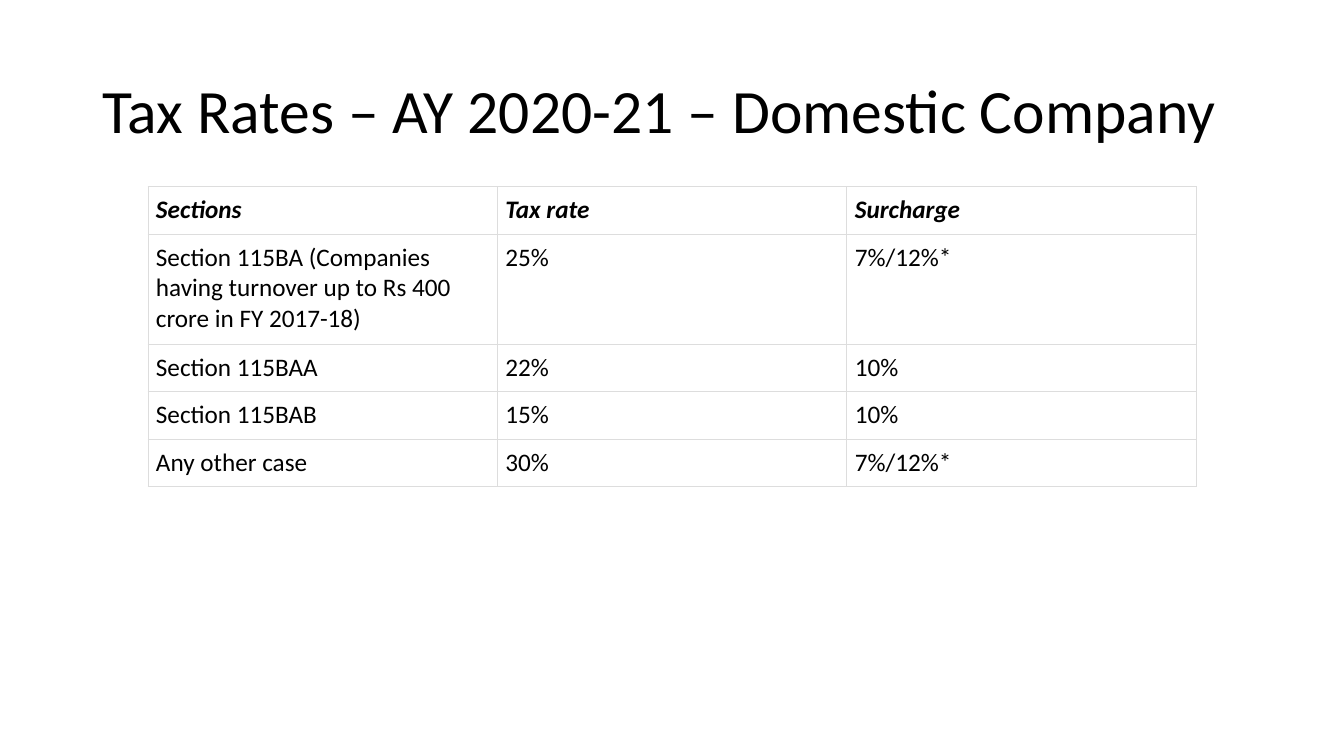
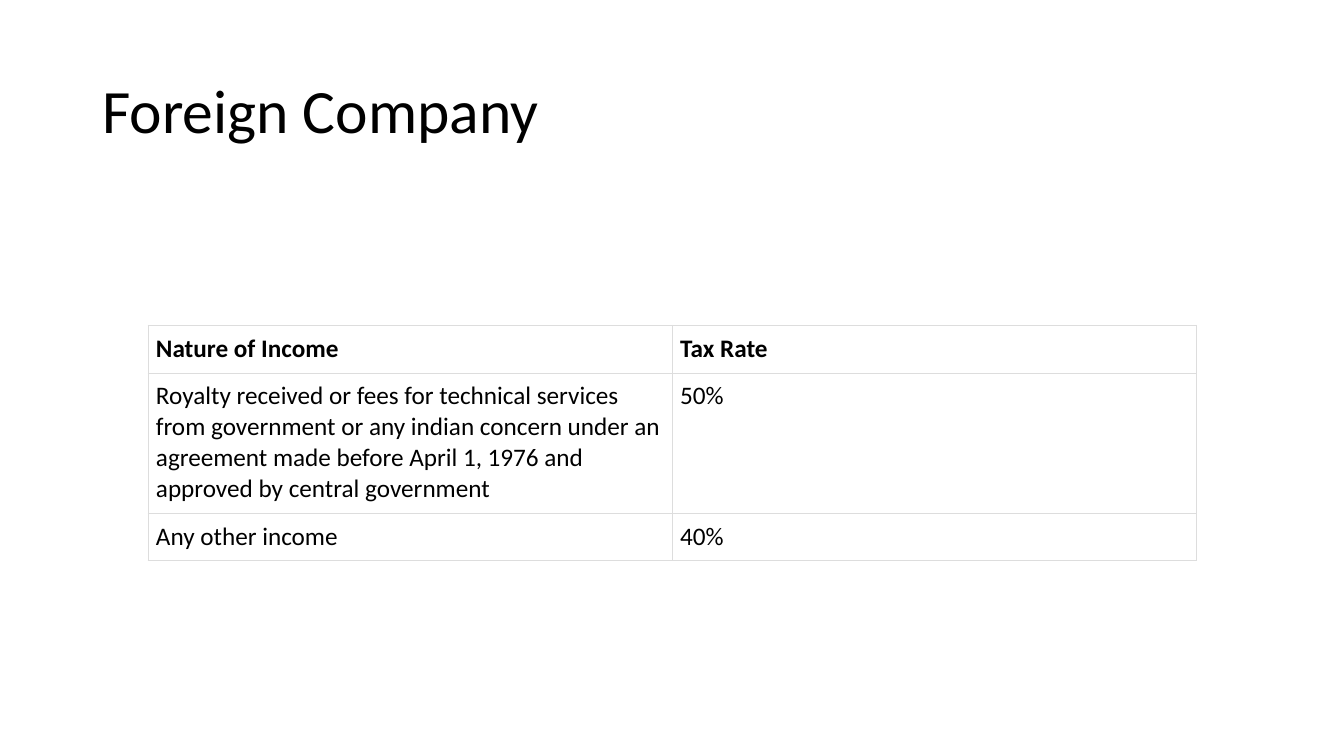
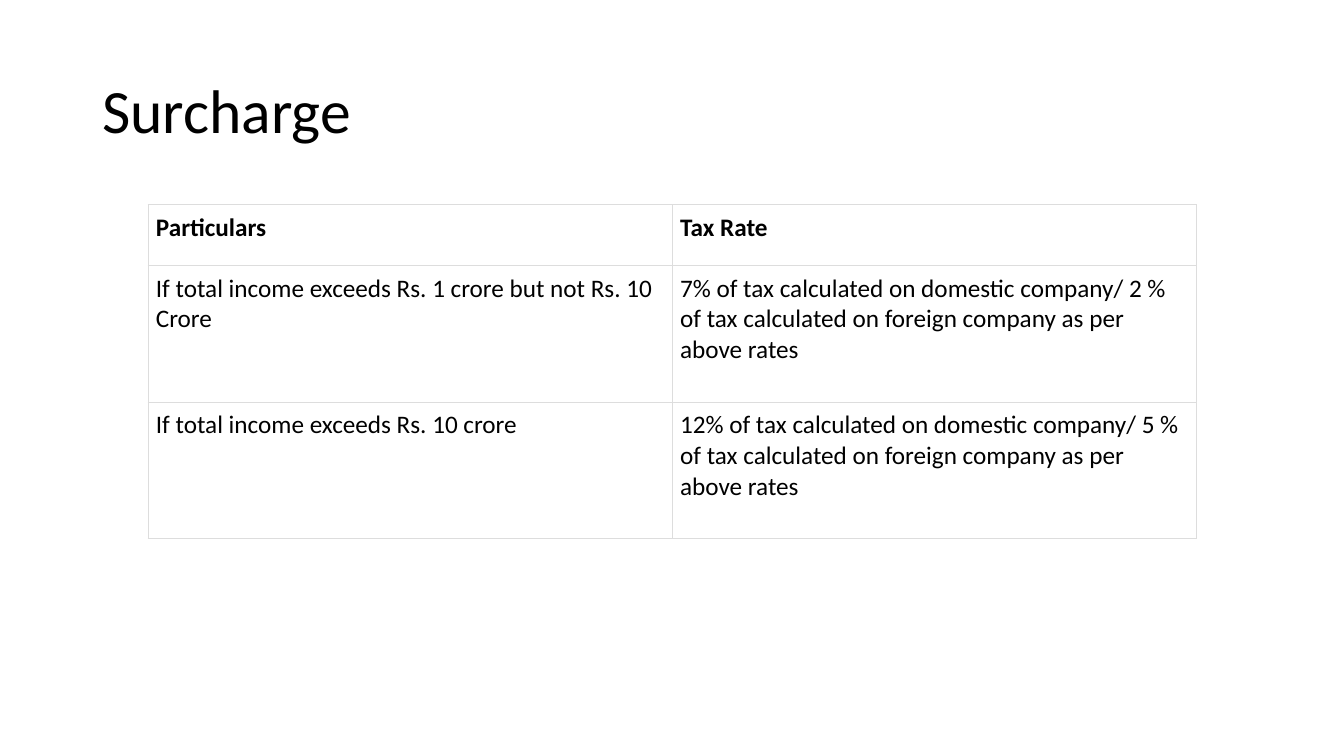
from lxml.etree import SubElement
from pptx import Presentation
from pptx.dml.color import RGBColor
from pptx.enum.text import MSO_ANCHOR
from pptx.oxml.ns import qn
from pptx.util import Cm, Pt

BLACK = RGBColor(0x00, 0x00, 0x00)
WHITE = RGBColor(0xFF, 0xFF, 0xFF)
GREY = RGBColor(0xDD, 0xDD, 0xDD)


class Deck:
    """Hold the shared style and the current slide."""

    font_name = "Calibri"
    title_size = Pt(44)
    cell_size = Pt(18)
    cell_margin = Cm(0.2)
    border_width = Pt(0.75)
    table_left = Cm(3.73)
    table_width = Cm(26.42)

    def __init__(self):
        self.presentation = Presentation()
        self.presentation.slide_width = Cm(33.87)
        self.presentation.slide_height = Cm(19.05)
        self.slide = None

    def add_slide(self, title):
        layout = self.presentation.slide_layouts[6]
        self.slide = self.presentation.slides.add_slide(layout)
        self.add_title(title)

    def add_title(self, text):
        box = self.slide.shapes.add_textbox(Cm(2.33), Cm(1.01), Cm(29.21), Cm(3.68))
        frame = box.text_frame
        frame.word_wrap = True
        frame.vertical_anchor = MSO_ANCHOR.MIDDLE
        frame.text = text
        frame.paragraphs[0].line_spacing = 0.9
        self.format_text(frame, self.title_size)

    def add_table(self, top, row_heights, rows, italic_header=False):
        column_count = len(rows[0])
        heights = [Cm(height) for height in row_heights]
        table = self.slide.shapes.add_table(
            len(rows), column_count, self.table_left, Cm(top),
            self.table_width, sum(heights)).table
        table.first_row = False
        table.horz_banding = False
        for column in table.columns:
            column.width = self.table_width // column_count
        for row_index, texts in enumerate(rows):
            table.rows[row_index].height = heights[row_index]
            header = row_index == 0
            for column_index, text in enumerate(texts):
                cell = table.cell(row_index, column_index)
                self.fill_cell(cell, text, header, header and italic_header)

    def fill_cell(self, cell, text, bold, italic):
        cell.margin_left = cell.margin_right = self.cell_margin
        cell.margin_top = cell.margin_bottom = self.cell_margin
        cell.text_frame.text = text
        self.format_text(cell.text_frame, self.cell_size, bold, italic)
        self.add_borders(cell)
        cell.fill.solid()
        cell.fill.fore_color.rgb = WHITE

    def add_borders(self, cell):
        properties = cell._tc.get_or_add_tcPr()
        for side in ("lnL", "lnR", "lnT", "lnB"):
            line = SubElement(properties, qn(f"a:{side}"), w=str(self.border_width))
            fill = SubElement(line, qn("a:solidFill"))
            SubElement(fill, qn("a:srgbClr"), val=str(GREY))

    def format_text(self, frame, size, bold=False, italic=False):
        for paragraph in frame.paragraphs:
            for run in paragraph.runs:
                run.font.name = self.font_name
                run.font.size = size
                run.font.bold = bold
                run.font.italic = italic
                run.font.color.rgb = BLACK


def main():
    deck = Deck()

    deck.add_slide("Tax Rates – AY 2020-21 – Domestic Company")
    deck.add_table(4.7, [1.2, 2.77, 1.2, 1.2, 1.2], [
        ("Sections", "Tax rate", "Surcharge"),
        ("Section 115BA (Companies having turnover up to Rs 400 crore in FY 2017-18)",
         "25%", "7%/12%*"),
        ("Section 115BAA", "22%", "10%"),
        ("Section 115BAB", "15%", "10%"),
        ("Any other case", "30%", "7%/12%*"),
    ], italic_header=True)

    deck.add_slide("Foreign Company")
    deck.add_table(8.2, [1.2, 3.53, 1.2], [
        ("Nature of Income", "Tax Rate"),
        ("Royalty received or fees for technical services from government or any "
         "indian concern under an agreement made before April 1, 1976 and "
         " approved by central government", "50%"),
        ("Any other income", "40%"),
    ])

    deck.add_slide("Surcharge")
    rate = "{} of tax calculated on domestic company/ {} of tax calculated on foreign company as per above rates"
    deck.add_table(5.16, [1.52, 3.45, 3.45], [
        ("Particulars", "Tax Rate"),
        ("If total income exceeds Rs. 1 crore but not Rs. 10 Crore",
         rate.format("7%", "2 %")),
        ("If total income exceeds Rs. 10 crore", rate.format("12%", "5 %")),
    ])

    deck.presentation.save("out.pptx")


if __name__ == "__main__":
    main()
